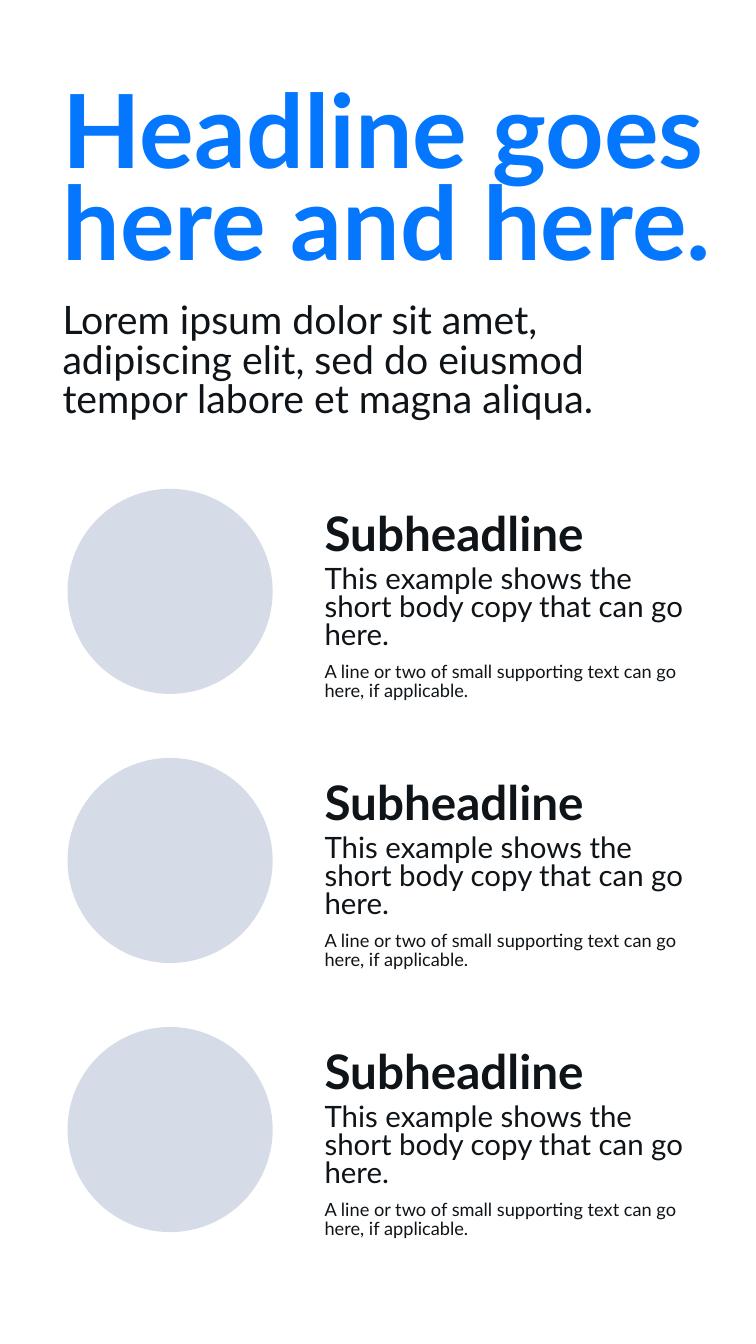
from dataclasses import dataclass
from pptx import Presentation
from pptx.dml.color import RGBColor
from pptx.enum.shapes import MSO_SHAPE
from pptx.enum.text import MSO_ANCHOR, MSO_AUTO_SIZE, PP_ALIGN
from pptx.util import Inches, Pt


@dataclass(frozen=True)
class Style:
    size: int
    line: int
    after: int
    color: str
    bold: bool = False


class Theme:
    font = "Lato"
    paper = "FFFFFF"
    disc = "D6DCE7"
    head = Style(146, 132, 32, "0477FE", True)
    lead = Style(56, 56, 0, "0F1419")
    sub = Style(68, 64, 8, "0F1419", True)
    body = Style(42, 40, 16, "0F1419")
    small = Style(26, 28, 8, "0F1419")


HEAD = "Headline goes here and here."
LEAD = "Lorem ipsum dolor sit amet, adipiscing elit, sed do eiusmod tempor labore et magna aliqua."
ITEM = (
    "Subheadline",
    "This example shows the short body copy that can go here.",
    "A line or two of small supporting text can go here, if applicable.",
)
ITEMS = [ITEM] * 3

COLS, ROWS = 15, 26.67
LEFT, TOP, WIDE = 1.24, 1.91, 12.89
DISC_X, DISC_Y, DISC = 1.34, 9.7, 4.07
TEXT_X, TEXT_W, TEXT_H = 6.44, 7.17, 3.4
DROP, PITCH = 0.55, 5.34


def area(*cells):
    return [Inches(cell) for cell in cells]


def write(shape, parts):
    frame = shape.text_frame
    frame.word_wrap = True
    frame.auto_size = MSO_AUTO_SIZE.NONE
    frame.vertical_anchor = MSO_ANCHOR.TOP
    frame.margin_left = frame.margin_right = 0
    frame.margin_top = frame.margin_bottom = 0
    frame.text = "\n".join(text for text, style in parts)
    for para, (text, style) in zip(frame.paragraphs, parts):
        para.alignment = PP_ALIGN.LEFT
        para.line_spacing = Pt(style.line)
        para.space_before = Pt(0)
        para.space_after = Pt(style.after)
        font = para.runs[0].font
        font.name = Theme.font
        font.size = Pt(style.size)
        font.bold = style.bold
        font.color.rgb = RGBColor.from_string(style.color)


def header(slide):
    title = slide.shapes.title
    tall = 2 * Theme.head.line / 72
    title.left, title.top, title.width, title.height = area(LEFT, TOP, WIDE, tall)
    write(title, [(HEAD, Theme.head)])
    top = TOP + tall + Theme.head.after / 72
    box = slide.shapes.add_textbox(*area(LEFT, top, WIDE, 3 * Theme.lead.line / 72))
    write(box, [(LEAD, Theme.lead)])


def entry(slide, row, texts):
    top = DISC_Y + row * PITCH
    disc = slide.shapes.add_shape(MSO_SHAPE.OVAL, *area(DISC_X, top, DISC, DISC))
    disc.shadow.inherit = False
    disc.fill.solid()
    disc.fill.fore_color.rgb = RGBColor.from_string(Theme.disc)
    disc.line.fill.background()
    box = slide.shapes.add_textbox(*area(TEXT_X, top + DROP, TEXT_W, TEXT_H))
    write(box, list(zip(texts, (Theme.sub, Theme.body, Theme.small))))


def main():
    deck = Presentation()
    deck.slide_width, deck.slide_height = area(COLS, ROWS)
    slide = deck.slides.add_slide(deck.slide_layouts[5])
    fill = slide.background.fill
    fill.solid()
    fill.fore_color.rgb = RGBColor.from_string(Theme.paper)
    header(slide)
    for row, texts in enumerate(ITEMS):
        entry(slide, row, texts)
    deck.save("out.pptx")


if __name__ == "__main__":
    main()
